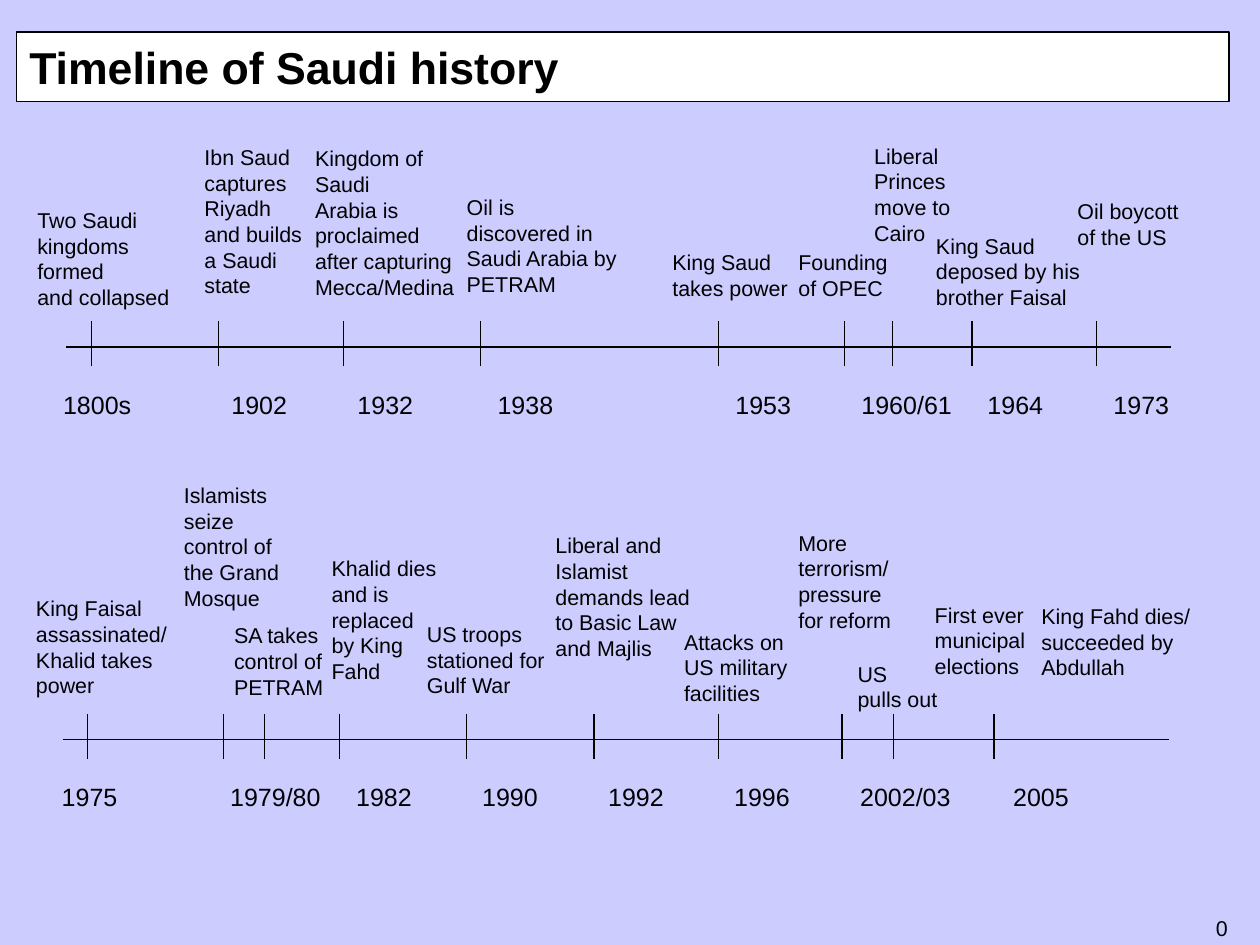
from pptx import Presentation
from pptx.dml.color import RGBColor
from pptx.enum.shapes import MSO_CONNECTOR, MSO_SHAPE
from pptx.enum.text import MSO_ANCHOR, PP_ALIGN
from pptx.oxml.ns import qn
from pptx.util import Inches, Pt
from lxml import etree

STRAIGHT = MSO_CONNECTOR.STRAIGHT
RECTANGLE = MSO_SHAPE.RECTANGLE
MIDDLE = MSO_ANCHOR.MIDDLE
LEFT, RIGHT = PP_ALIGN.LEFT, PP_ALIGN.RIGHT

LAVENDER = RGBColor(0xCC, 0xCC, 0xFF)
WHITE = RGBColor(0xFF, 0xFF, 0xFF)
BLACK = RGBColor(0, 0, 0)
FONT = "Arial"

# Content: events are (left, top, width, lines), dates are (tab stop, label)
TITLE = "Timeline of Saudi history"
PAGE_NUMBER = "0"
TIMELINES = [
    {
        "left": 0.51, "axis": 2.7,
        "ticks": [0.71, 1.7, 2.67, 3.74, 5.59, 6.57, 6.94, 7.56, 8.53],
        "dates_left": 0.49,
        "dates": [(0, "1800s"), (1.31, "1902"), (2.29, "1932"), (3.38, "1938"),
                  (5.23, "1953"), (6.21, "1960/61"), (7.19, "1964"), (8.17, "1973")],
        "events": [
            (0.29, 1.61, 1.08, ["Two Saudi", "kingdoms", "formed", "and collapsed"]),
            (1.59, 1.12, 0.82, ["Ibn Saud", "captures", "Riyadh", "and builds",
                                "a Saudi", "state"]),
            (2.45, 1.13, 1.21, ["Kingdom of", "Saudi", "Arabia is", "proclaimed",
                                "after capturing", "Mecca/Medina"]),
            (3.63, 1.51, 1.21, ["Oil is", "discovered in", "Saudi Arabia by", "PETRAM"]),
            (5.23, 1.94, 1.21, ["King Saud", "takes power"]),
            (6.21, 1.94, 0.72, ["Founding", "of OPEC"]),
            (6.8, 1.11, 0.7, ["Liberal", "Princes", "move to", "Cairo"]),
            (7.28, 1.81, 1.21, ["King Saud", "deposed by his", "brother Faisal"]),
            (8.38, 1.54, 1.19, ["Oil boycott", "of the US"]),
        ],
    },
    {
        "left": 0.49, "axis": 5.75,
        "ticks": [0.68, 1.74, 2.06, 2.64, 3.63, 4.62, 5.59, 6.55, 6.95, 7.73],
        "dates_left": 0.48,
        "dates": [(0, "1975"), (1.31, "1979/80"), (2.29, "1982"), (3.27, "1990"),
                  (4.25, "1992"), (5.23, "1996"), (6.21, "2002/03"), (7.4, "2005")],
        "events": [
            (0.28, 4.63, 1.08, ["King Faisal", "assassinated/", "Khalid takes", "power"]),
            (1.43, 3.75, 0.82, ["Islamists", "seize", "control of", "the Grand", "Mosque"]),
            (1.82, 4.84, 1.21, ["SA takes", "control of", "PETRAM"]),
            (2.58, 4.32, 0.84, ["Khalid dies", "and is", "replaced", "by King", "Fahd"]),
            (3.32, 4.83, 1.21, ["US troops", "stationed for", "Gulf War"]),
            (4.32, 4.14, 1.21, ["Liberal and", "Islamist", "demands lead",
                                "to Basic Law", "and Majlis"]),
            (5.32, 4.89, 0.88, ["Attacks on", "US military", "facilities"]),
            (6.21, 4.12, 0.86, ["More", "terrorism/", "pressure", "for reform"]),
            (6.67, 5.14, 0.7, ["US", "pulls out"]),
            (7.27, 4.68, 1.21, ["First ever", "municipal", "elections"]),
            (8.1, 4.69, 1.19, ["King Fahd dies/", "succeeded by", "Abdullah"]),
        ],
    },
]

# Layout
AXIS_LENGTH = 8.6
TICK_ABOVE, TICK_BELOW = 0.2, 0.15
DATES_DROP, DATES_WIDTH, DATES_HEIGHT = 0.33, 8.88, 0.24
LINE_HEIGHT = 0.2


def set_text(tf, text, size, bold=False, align=LEFT):
    tf.text = text
    tf.word_wrap = True
    for p in tf.paragraphs:
        p.alignment = align
        for r in p.runs:
            r.font.name = FONT
            r.font.size = Pt(size)
            r.font.bold = bold
            r.font.color.rgb = BLACK


def add_text(slide, left, top, width, height, text, size, align=LEFT):
    sp = slide.shapes.add_textbox(Inches(left), Inches(top), Inches(width), Inches(height))
    tf = sp.text_frame
    tf.margin_left = tf.margin_right = tf.margin_top = tf.margin_bottom = 0
    set_text(tf, text, size, align=align)
    return tf


def add_line(slide, x1, y1, x2, y2):
    line = slide.shapes.add_connector(STRAIGHT, Inches(x1), Inches(y1), Inches(x2), Inches(y2))
    line.line.color.rgb = BLACK
    line.line.width = Pt(0.75)
    etree.SubElement(line._element.spPr, qn("a:effectLst"))


def add_dates(slide, left, top, dates):
    labels = "\t".join(label for _, label in dates)
    tf = add_text(slide, left, top, DATES_WIDTH, DATES_HEIGHT, labels, 14)
    tabs = etree.SubElement(tf.paragraphs[0]._p.get_or_add_pPr(), qn("a:tabLst"))
    for stop, _ in dates[1:]:
        etree.SubElement(tabs, qn("a:tab"), pos=str(Inches(stop)), algn="l")


def add_timeline(slide, timeline):
    left, axis = timeline["left"], timeline["axis"]
    add_line(slide, left, axis, left + AXIS_LENGTH, axis)
    for x in timeline["ticks"]:
        add_line(slide, x, axis + TICK_BELOW, x, axis - TICK_ABOVE)
    add_dates(slide, timeline["dates_left"], axis + DATES_DROP, timeline["dates"])
    for x, y, width, lines in timeline["events"]:
        add_text(slide, x, y, width, LINE_HEIGHT * len(lines), "\n".join(lines), 12)


def main():
    prs = Presentation()
    prs.slide_width, prs.slide_height = Inches(9.8), Inches(7.35)
    slide = prs.slides.add_slide(prs.slide_layouts[6])
    slide.background.fill.solid()
    slide.background.fill.fore_color.rgb = LAVENDER

    # Title bar
    bar = slide.shapes.add_shape(RECTANGLE, Inches(0.13), Inches(0.25),
                                 Inches(9.43), Inches(0.54))
    bar.shadow.inherit = False
    bar.fill.solid()
    bar.fill.fore_color.rgb = WHITE
    bar.line.color.rgb = BLACK
    bar.line.width = Pt(0.75)
    bar.text_frame.vertical_anchor = MIDDLE
    set_text(bar.text_frame, TITLE, 25, bold=True)

    # Timelines and page number
    for timeline in TIMELINES:
        add_timeline(slide, timeline)
    add_text(slide, 9.35, 7.12, 0.2, 0.2, PAGE_NUMBER, 12, RIGHT)

    prs.save("out.pptx")


if __name__ == "__main__":
    main()
